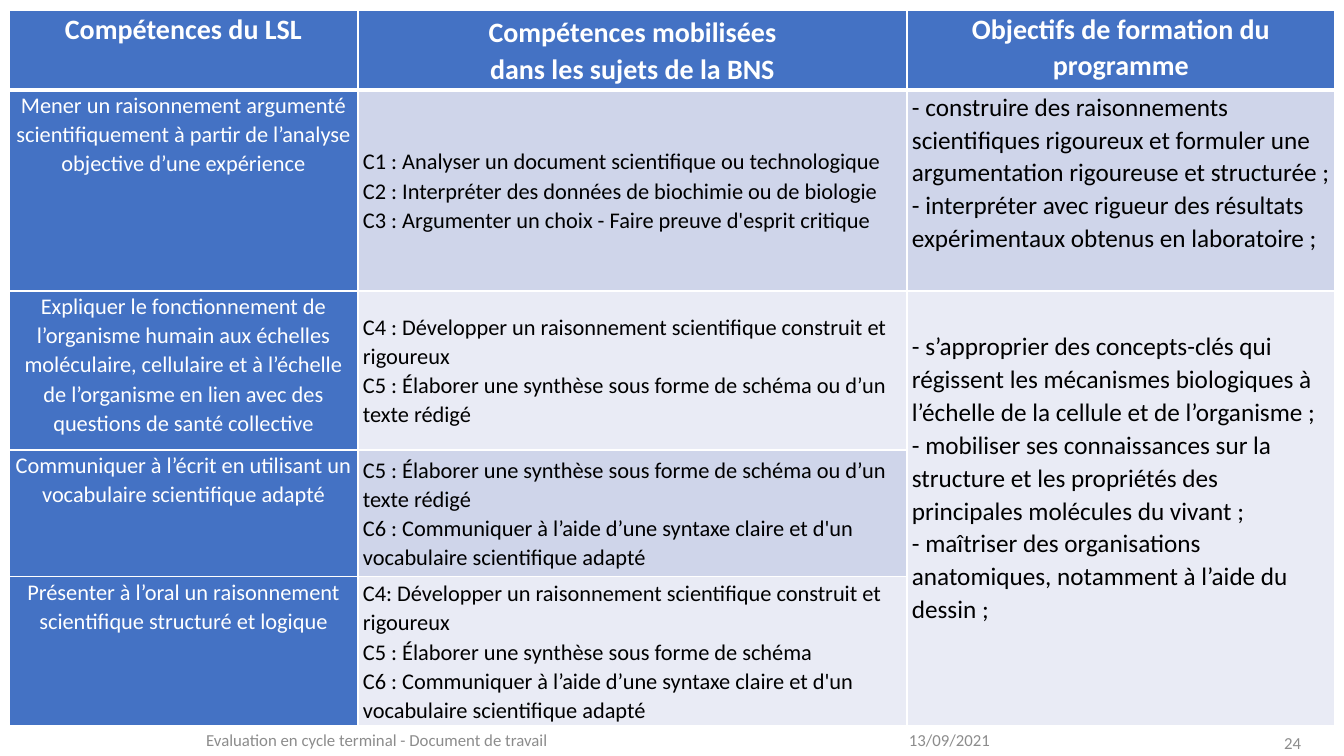
from lxml.etree import SubElement
from pptx import Presentation
from pptx.dml.color import RGBColor
from pptx.enum.text import MSO_ANCHOR, PP_ALIGN
from pptx.oxml.ns import qn
from pptx.util import Pt

PX = 914400 / 100.8
WHITE = RGBColor(0xFF, 0xFF, 0xFF)
BLACK = RGBColor(0, 0, 0)
BLUE = RGBColor(0x44, 0x72, 0xC4)
BAND_DARK = RGBColor(0xCF, 0xD5, 0xEA)
BAND_LIGHT = RGBColor(0xE9, 0xEB, 0xF5)
GREY = RGBColor(0x8C, 0x8C, 0x8C)

COLUMN_WIDTHS = [349, 549, 428]
ROW_HEIGHTS = [80, 201, 159, 127, 149]
HEADINGS = [
    ["Compétences du LSL"],
    ["Compétences mobilisées", "dans les sujets de la BNS"],
    ["Objectifs de formation du programme"],
]
LSL_SKILLS = [
    "Mener un raisonnement argumenté scientifiquement à partir de l’analyse "
    "objective d’une expérience",
    "Expliquer le fonctionnement de l’organisme humain aux échelles moléculaire, "
    "cellulaire et à l’échelle de l’organisme en lien avec des questions de santé collective",
    "Communiquer à l’écrit en utilisant un vocabulaire scientifique adapté",
    "Présenter à l’oral un raisonnement scientifique structuré et logique",
]
REASONING = "Développer un raisonnement scientifique construit et rigoureux"
SYNTHESIS = "C5 : Élaborer une synthèse sous forme de schéma"
SYNTHESIS_OR_TEXT = SYNTHESIS + " ou d’un texte rédigé"
COMMUNICATION = ("C6 : Communiquer à l’aide d’une syntaxe claire et d'un "
                 "vocabulaire scientifique adapté")
BNS_SKILLS = [
    ["C1 : Analyser un document scientifique ou technologique",
     "C2 : Interpréter des données de biochimie ou de biologie",
     "C3 : Argumenter un choix - Faire preuve d'esprit critique"],
    ["C4 : " + REASONING, SYNTHESIS_OR_TEXT],
    [SYNTHESIS_OR_TEXT, COMMUNICATION],
    ["C4: " + REASONING, SYNTHESIS, COMMUNICATION],
]
LAB_GOALS = [
    "- construire des raisonnements scientifiques rigoureux et formuler une "
    "argumentation rigoureuse et structurée ;",
    "- interpréter avec rigueur des résultats expérimentaux obtenus en laboratoire ;",
]
BIOLOGY_GOALS = [
    "- s’approprier des concepts-clés qui régissent les mécanismes biologiques à "
    "l’échelle de la cellule et de l’organisme ;",
    "- mobiliser ses connaissances sur la structure et les propriétés des "
    "principales molécules du vivant ;",
    "- maîtriser des organisations anatomiques, notamment à l’aide du dessin ;",
]
FOOTERS = [
    ("13/09/2021", (899, 720, 302, 40), PP_ALIGN.LEFT),
    ("Evaluation en cycle terminal - Document de travail", (9, 720, 736, 40), PP_ALIGN.CENTER),
    ("24", (1226, 733, 85, 20), PP_ALIGN.RIGHT),
]


def px(length):
    return round(length * PX)


class SlideBuilder:
    font = "Calibri"
    cell_spacing = 1.07

    def __init__(self, page):
        self.page = page

    def add_lines(self, frame, lines, size, color, align, bold=False, spacing=None):
        for index, line in enumerate(lines):
            para = frame.add_paragraph() if index else frame.paragraphs[0]
            para.alignment = align
            if spacing:
                para.line_spacing = spacing
            span = para.add_run()
            span.text = line
            span.font.name = self.font
            span.font.size = Pt(size)
            span.font.bold = bold
            span.font.color.rgb = color

    def text(self, line, place, align):
        frame = self.page.shapes.add_textbox(*map(px, place)).text_frame
        frame.word_wrap = True
        frame.vertical_anchor = MSO_ANCHOR.MIDDLE
        self.add_lines(frame, [line], 12, GREY, align)

    def table(self, left, top, widths, heights):
        table = self.page.shapes.add_table(
            len(heights), len(widths), px(left), px(top),
            px(sum(widths)), px(sum(heights))).table
        for column, width in zip(table.columns, widths):
            column.width = px(width)
        for row, height in zip(table.rows, heights):
            row.height = px(height)
        table.horz_banding = False
        return table

    def paint(self, cell, fill, top=1, bottom=1):
        """Fill a cell and rule its sides in white, with widths in points."""
        properties = cell._tc.get_or_add_tcPr()
        for side, width in (("L", 1), ("R", 1), ("T", top), ("B", bottom)):
            line = SubElement(properties, qn("a:ln" + side), w=str(Pt(width)))
            solid = SubElement(line, qn("a:solidFill"))
            SubElement(solid, qn("a:srgbClr"), val=str(WHITE))
        cell.fill.solid()
        cell.fill.fore_color.rgb = fill

    def cell(self, cell, lines, size, color, align=PP_ALIGN.LEFT,
             anchor=MSO_ANCHOR.TOP, bold=False, bottom=0):
        cell.margin_left = cell.margin_right = px(5)
        cell.margin_top, cell.margin_bottom = 0, px(bottom)
        cell.vertical_anchor = anchor
        self.add_lines(cell.text_frame, lines, size, color, align, bold, self.cell_spacing)


def main():
    deck = Presentation()
    deck.slide_width, deck.slide_height = px(1344), px(756)
    builder = SlideBuilder(deck.slides.add_slide(deck.slide_layouts[6]))
    table = builder.table(9, 10, COLUMN_WIDTHS, ROW_HEIGHTS)

    for row in range(len(ROW_HEIGHTS)):
        for column in range(len(COLUMN_WIDTHS)):
            band = BAND_DARK if row % 2 else BAND_LIGHT
            fill = BLUE if row == 0 or column == 0 else band
            builder.paint(table.cell(row, column), fill,
                          top=3 if row == 1 else 1, bottom=3 if row == 0 else 1)
    table.cell(2, 2).merge(table.cell(4, 2))

    for column, lines in enumerate(HEADINGS):
        anchor = MSO_ANCHOR.MIDDLE if column == 1 else MSO_ANCHOR.TOP
        builder.cell(table.cell(0, column), lines, 20, WHITE, PP_ALIGN.CENTER, anchor, bold=True)
    for row, (skill, mobilised) in enumerate(zip(LSL_SKILLS, BNS_SKILLS), start=1):
        builder.cell(table.cell(row, 0), [skill], 16, WHITE, PP_ALIGN.CENTER)
        builder.cell(table.cell(row, 1), mobilised, 16, BLACK, anchor=MSO_ANCHOR.MIDDLE)
    builder.cell(table.cell(1, 2), LAB_GOALS, 18, BLACK)
    builder.cell(table.cell(2, 2), BIOLOGY_GOALS, 18, BLACK, anchor=MSO_ANCHOR.MIDDLE, bottom=62)

    for line, place, align in FOOTERS:
        builder.text(line, place, align)
    deck.save("out.pptx")


if __name__ == "__main__":
    main()
